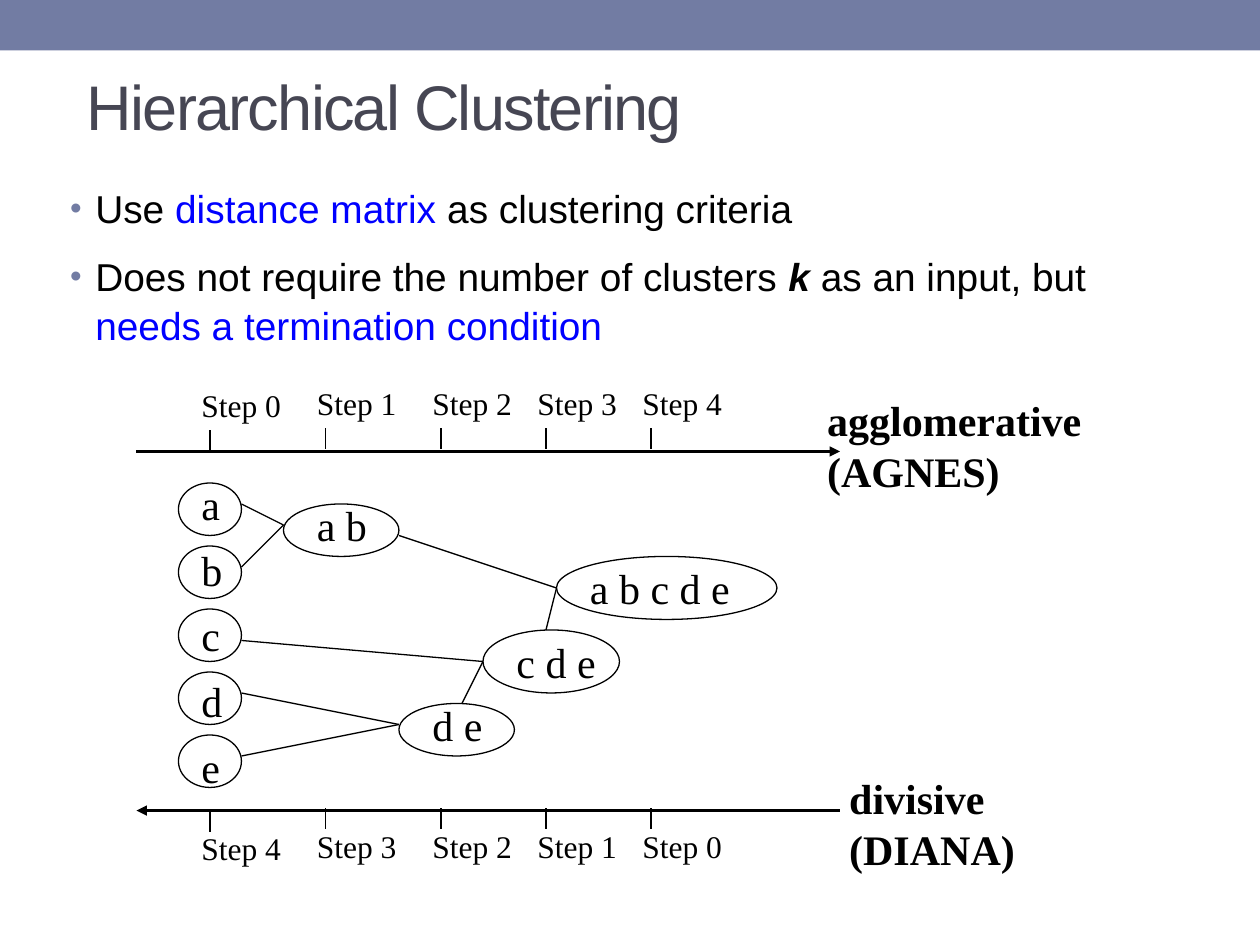
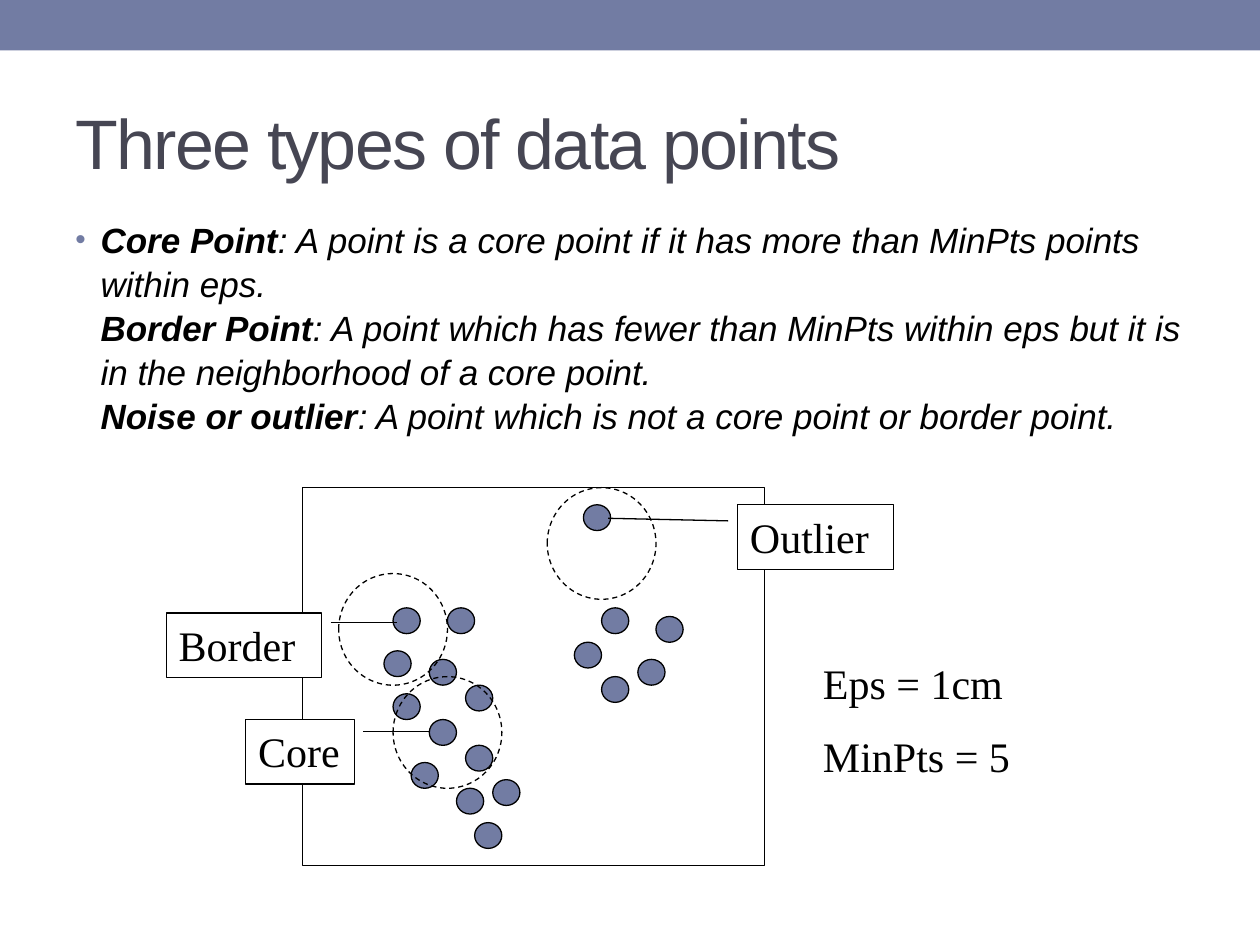
from dataclasses import dataclass
from typing import NamedTuple

from lxml.etree import SubElement
from pptx import Presentation
from pptx.dml.color import RGBColor
from pptx.enum.dml import MSO_LINE
from pptx.enum.shapes import MSO_CONNECTOR, MSO_SHAPE
from pptx.enum.text import MSO_ANCHOR, PP_ALIGN
from pptx.oxml.ns import qn
from pptx.util import Inches, Pt

COLORS = {
    "band": "727CA3",
    "title": "464653",
    "text": "000000",
    "accent": "0000FF",
    "paper": "FFFFFF",
}
SANS, SERIF = "Arial", "Times New Roman"


class Span(NamedTuple):
    text: str
    color: str = "text"
    bold: bool = False
    italic: bool = False


@dataclass(frozen=True)
class Grid:
    """Columns and rows of equal size, counted from a corner in inches."""
    left: float
    top: float
    column: float
    row: float

    def point(self, x: float, y: float) -> tuple:
        return Inches(self.left + x * self.column), Inches(self.top + y * self.row)

    def frame(self, x: float, y: float, width: float, height: float) -> tuple:
        return (*self.point(x, y), Inches(width * self.column), Inches(height * self.row))


class Cluster(NamedTuple):
    label: str
    left: float
    top: float
    width: float
    height: float
    label_left: float
    label_top: float
    label_width: float


class Axis(NamedTuple):
    row: float
    tick_row: float
    label_row: float
    first_step: int
    direction: int
    arrow_end: str
    name: str
    name_frame: tuple


class Callout(NamedTuple):
    label: str
    frame: tuple
    pointer: tuple


PAGE = Grid(0, 0, 1 / 12, 1 / 12)          # 120 columns by 90 rows
SCATTER = Grid(2.4, 3.87, 3.67 / 51, 3 / 44)  # 51 columns by 44 rows


# Shared drawing functions
def rgb(name: str) -> RGBColor:
    return RGBColor.from_string(COLORS[name])


def write_text(shape, paragraphs: list, *, size: float, font: str = SERIF, color: str = "text",
               bold: bool = False, anchor=MSO_ANCHOR.TOP, wrap: bool = True, gap: float = 0,
               leading: float = 1, tracking: float = 0, bullet: bool = False) -> None:
    """Write paragraphs, each a string or a list of spans."""
    frame = shape.text_frame
    frame.word_wrap = wrap
    frame.vertical_anchor = anchor
    for index, content in enumerate(paragraphs):
        para = frame.paragraphs[0] if index == 0 else frame.add_paragraph()
        para.alignment = PP_ALIGN.LEFT
        para.line_spacing = leading
        para.space_before = Pt(gap if index else 0)
        if bullet:
            add_bullet(para)
        spans = [Span(content, color, bold)] if isinstance(content, str) else content
        for span in spans:
            for number, line in enumerate(span.text.split("\n")):
                if number:
                    para.add_line_break()
                if not line:
                    continue
                run = para.add_run()
                run.text = line
                run.font.name, run.font.size = font, Pt(size)
                run.font.bold, run.font.italic = span.bold, span.italic
                run.font.color.rgb = rgb(span.color)
                if tracking:
                    run.font._element.set("spc", str(int(tracking * 100)))


def add_bullet(para) -> None:
    properties = para._p.get_or_add_pPr()
    properties.set("marL", str(Inches(0.2)))
    properties.set("indent", str(-Inches(0.2)))
    tint = SubElement(properties, qn("a:buClr"))
    SubElement(tint, qn("a:srgbClr"), val=COLORS["band"])
    SubElement(properties, qn("a:buSzPct"), val="85000")
    SubElement(properties, qn("a:buFont"), typeface=SANS)
    SubElement(properties, qn("a:buChar"), char="•")


def add_text(page, frame: tuple, paragraphs: list, **style):
    box = page.shapes.add_textbox(*frame)
    write_text(box, paragraphs, **style)
    return box


def add_figure(page, kind, frame: tuple, *, fill: str = "", outline: str = "text",
               dashed: bool = False):
    shape = page.shapes.add_shape(kind, *frame)
    shape.shadow.inherit = False
    if fill:
        shape.fill.solid()
        shape.fill.fore_color.rgb = rgb(fill)
    else:
        shape.fill.background()
    if outline:
        shape.line.color.rgb = rgb(outline)
        shape.line.width = Pt(0.75)
    else:
        shape.line.fill.background()
    if dashed:
        shape.line.dash_style = MSO_LINE.DASH
    return shape


def add_line(page, start: tuple, end: tuple, *, width: float = 0.75, arrow_end: str = "") -> None:
    line = page.shapes.add_connector(MSO_CONNECTOR.STRAIGHT, *PAGE.point(*start), *PAGE.point(*end))
    line.line.color.rgb = rgb("text")
    line.line.width = Pt(width)
    if arrow_end:
        SubElement(line.line._get_or_add_ln(), qn(f"a:{arrow_end}"), type="triangle")
    SubElement(line._element.spPr, qn("a:effectLst"))


def add_page(deck, title: str, title_frame: tuple, title_size: float):
    page = deck.slides.add_slide(deck.slide_layouts[6])
    add_figure(page, MSO_SHAPE.RECTANGLE, PAGE.frame(0, 0, 120, 4.8), fill="band", outline="")
    add_text(page, PAGE.frame(*title_frame), [title], size=title_size, font=SANS,
             color="title", anchor=MSO_ANCHOR.MIDDLE, tracking=-1)
    return page


# Hierarchical clustering
STEP_COLUMNS = (20, 31, 42, 52, 62)
AXES = (
    Axis(43, 40.8, 36, 0, 1, "tailEnd", "agglomerative\n(AGNES)", (77.6, 37, 26.6, 10.8)),
    Axis(77.2, 77, 78.2, 4, -1, "headEnd", "divisive\n(DIANA)", (79.7, 73, 18.2, 10.8)),
)
CLUSTERS = [
    Cluster(letter, 17, 46 + 6 * i, 6, 5, 18, 45 + 6.25 * i, 4.4)
    for i, letter in enumerate("abcde")
] + [
    Cluster("a b", 27, 48, 11, 5, 29, 47, 7.2),
    Cluster("d e", 38, 67, 11, 5, 40, 66, 7.2),
    Cluster("c d e", 46, 60, 13, 6, 48, 60, 10),
    Cluster("a b c d e", 53, 53, 21, 6, 55, 53, 15.7),
]
LINKS = (
    ((23, 48), (27, 50)), ((23, 54), (27, 50)),
    ((23, 66), (38, 69)), ((23, 72), (38, 69)),
    ((23, 61), (46, 63)), ((44, 67), (46, 63)),
    ((38, 51), (53, 56)), ((52, 60), (53, 56)),
)


def draw_axis(page, axis: Axis) -> None:
    add_line(page, (13, axis.row), (80, axis.row), width=1.5, arrow_end=axis.arrow_end)
    for i, column in enumerate(STEP_COLUMNS):
        drop = 0 if i else 0.2  # the first step sits slightly lower
        tick = axis.tick_row + drop
        add_line(page, (column, tick), (column, tick + 2))
        add_text(page, PAGE.frame(column - 2, axis.label_row + drop, 10, 4.8),
                 [f"Step {axis.first_step + axis.direction * i}"], size=18)
    add_text(page, PAGE.frame(*axis.name_frame), axis.name.split("\n"),
             size=24, bold=True, wrap=False)


def build_hierarchy(deck) -> None:
    page = add_page(deck, "Hierarchical Clustering", (7.1, 4.9, 95.8, 10.3), 36)
    add_text(page, PAGE.frame(5.5, 16.8, 109, 16), [
        [Span("Use "), Span("distance matrix ", "accent"), Span("as clustering criteria")],
        [Span("Does not require the number of clusters "), Span("k", bold=True, italic=True),
         Span(" as an input, but "), Span("needs a termination condition", "accent")],
    ], size=22.2, font=SANS, gap=11, leading=1.05, bullet=True)
    for axis in AXES:
        draw_axis(page, axis)
    for cluster in CLUSTERS:
        add_text(page, PAGE.frame(cluster.label_left, cluster.label_top, cluster.label_width, 6),
                 [cluster.label], size=24, wrap=False)
        add_figure(page, MSO_SHAPE.OVAL,
                   PAGE.frame(cluster.left, cluster.top, cluster.width, cluster.height))
    for start, end in LINKS:
        add_line(page, start, end)


# Types of data points
POINTS = (
    (10, 14), (9, 19), (14, 20), (16, 14), (18, 23), (10, 24), (14, 27), (12, 32), (17, 35),
    (19, 39), (18, 30), (31, 2), (33, 14), (30, 18), (37, 20), (39, 15), (33, 22), (21, 34),
)
NEIGHBORHOODS = ((4, 10), (10, 22), (27, 0))
CALLOUTS = (
    Callout("Core", (-6.25, 27, 12, 7.5), (0.19, 1.08, 0.19, 1.69)),
    Callout("Border", (-15, 14.6, 17.1, 7.5), (0.15, 1.06, 0.15, 1.49)),
    Callout("Outlier", (48, 2, 17.2, 7.5), (0.25, -0.06, 0.21, -0.83)),
)


def build_point_types(deck) -> None:
    page = add_page(deck, "Three types of data points", (6, 7, 108, 13), 40)
    definitions = (
        ("Core Point", ": A point is a core point if it has more than MinPts points within eps.\n"),
        ("Border Point", ": A point which has fewer than MinPts within eps but it is "
                         "in the neighborhood of a core point.\n"),
        ("Noise or outlier", ": A point which is not a core point or border point."),
    )
    spans = [Span(text, bold=bold, italic=True)
             for term, meaning in definitions
             for text, bold in ((term, True), (meaning, False))]
    add_text(page, PAGE.frame(6, 20, 109.4, 64), [spans], size=20, font=SANS,
             leading=1.05, bullet=True)

    # Scatter field
    for column, row in POINTS:
        add_figure(page, MSO_SHAPE.OVAL, SCATTER.frame(column, row, 3, 3), fill="band")
    add_figure(page, MSO_SHAPE.RECTANGLE, SCATTER.frame(0, 0, 51, 44))
    for column, row in NEIGHBORHOODS:
        add_figure(page, MSO_SHAPE.OVAL, SCATTER.frame(column, row, 12, 13), dashed=True)

    # Callouts and parameters
    for callout in CALLOUTS:
        shape = add_figure(page, MSO_SHAPE.LINE_CALLOUT_1, SCATTER.frame(*callout.frame),
                           fill="paper")
        for i, share in enumerate(callout.pointer):
            shape.adjustments[i] = share
        write_text(shape, [callout.label], size=24)
    add_text(page, PAGE.frame(77.2, 62, 21.6, 13.2), ["Eps = 1cm", "MinPts = 5"], size=24, gap=13)


def main() -> None:
    deck = Presentation()
    deck.slide_width, deck.slide_height = Inches(10), Inches(7.5)
    build_hierarchy(deck)
    build_point_types(deck)
    deck.save("out.pptx")


if __name__ == "__main__":
    main()
